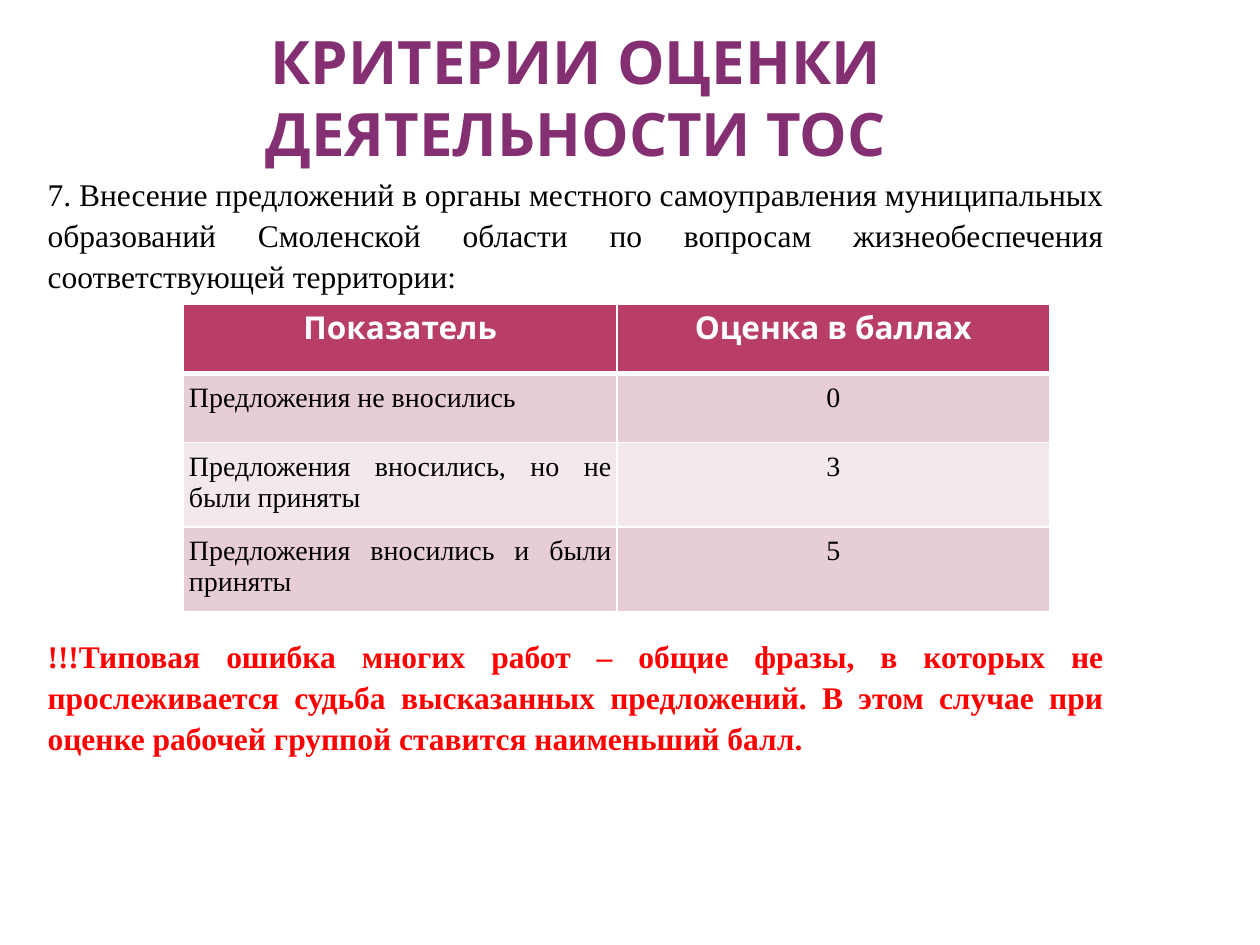
from lxml.etree import SubElement
from pptx import Presentation
from pptx.dml.color import RGBColor
from pptx.enum.text import MSO_ANCHOR, PP_ALIGN
from pptx.oxml.ns import qn
from pptx.util import Pt

PLUM = RGBColor(0x85, 0x2F, 0x73)
CRIMSON = RGBColor(0xB8, 0x3D, 0x68)
ROSE = RGBColor(0xE6, 0xCE, 0xD4)
PALE_ROSE = RGBColor(0xF3, 0xE8, 0xEB)
WHITE = RGBColor(0xFF, 0xFF, 0xFF)
BLACK = RGBColor(0, 0, 0)
RED = RGBColor(0xFF, 0, 0)


def write_text(frame, text, font="Times New Roman", size=18, color=BLACK,
               bold=False, align=PP_ALIGN.JUSTIFY, spacing=None):
    frame.word_wrap = True
    para = frame.paragraphs[0]
    para.alignment = align
    para.line_spacing = spacing
    span = para.add_run()
    span.text = text
    span.font.name = font
    span.font.size = Pt(size)
    span.font.bold = bold
    span.font.color.rgb = color


def add_border(cell, side, width):
    line = SubElement(cell._tc.get_or_add_tcPr(), qn(f"a:{side}"), w=str(Pt(width)))
    fill = SubElement(line, qn("a:solidFill"))
    SubElement(fill, qn("a:srgbClr"), val=str(WHITE))


deck = Presentation()
deck.slide_width, deck.slide_height = Pt(720), Pt(540)
page = deck.slides.add_slide(deck.slide_layouts[6])

title = page.shapes.add_textbox(Pt(20), Pt(12), Pt(618), Pt(84)).text_frame
title.margin_left = title.margin_right = Pt(3.6)
title.margin_top = title.margin_bottom = 0
title.vertical_anchor = MSO_ANCHOR.BOTTOM
write_text(title, "КРИТЕРИИ ОЦЕНКИ ДЕЯТЕЛЬНОСТИ ТОС", font="Karla", size=34.2,
           color=PLUM, bold=True, align=PP_ALIGN.CENTER)

passages = [
    (94.3, BLACK, False,
     "7. Внесение предложений в органы местного самоуправления муниципальных "
     "образований Смоленской области по вопросам жизнеобеспечения "
     "соответствующей территории:"),
    (358.5, RED, True,
     "!!!Типовая ошибка многих работ – общие фразы, в которых не прослеживается "
     "судьба высказанных предложений. В этом случае при оценке рабочей группой "
     "ставится наименьший балл."),
]
for top, color, bold, text in passages:
    box = page.shapes.add_textbox(Pt(14.4), Pt(top), Pt(623.5), Pt(73))
    box.text_frame.margin_left = Pt(12.8)
    write_text(box.text_frame, text, color=color, bold=bold, spacing=1.09)

rows = [
    ("Показатель", "Оценка в баллах"),
    ("Предложения не вносились", "0"),
    ("Предложения вносились, но не были приняты", "3"),
    ("Предложения вносились и были приняты", "5"),
]
heights = [39.4, 39.4, 45.6, 45.6]
fills = [CRIMSON, ROSE, PALE_ROSE, ROSE]
table = page.shapes.add_table(len(rows), 2, Pt(105), Pt(174), Pt(495), Pt(sum(heights))).table
for r, (texts, height, fill) in enumerate(zip(rows, heights, fills)):
    table.rows[r].height = Pt(height)
    for c, text in enumerate(texts):
        cell = table.cell(r, c)
        if r == 0:
            write_text(cell.text_frame, text, font="Karla", color=WHITE, bold=True,
                       align=PP_ALIGN.CENTER)
        else:
            cell.margin_left = cell.margin_right = Pt(3)
            cell.margin_top = cell.margin_bottom = Pt(5)
            write_text(cell.text_frame, text, size=16,
                       align=PP_ALIGN.CENTER if c else PP_ALIGN.JUSTIFY)
        add_border(cell, "lnL", 1)
        add_border(cell, "lnR", 1)
        add_border(cell, "lnT", 3 if r == 1 else 1)
        add_border(cell, "lnB", 3 if r == 0 else 1)
        cell.fill.solid()
        cell.fill.fore_color.rgb = fill

deck.save("out.pptx")
